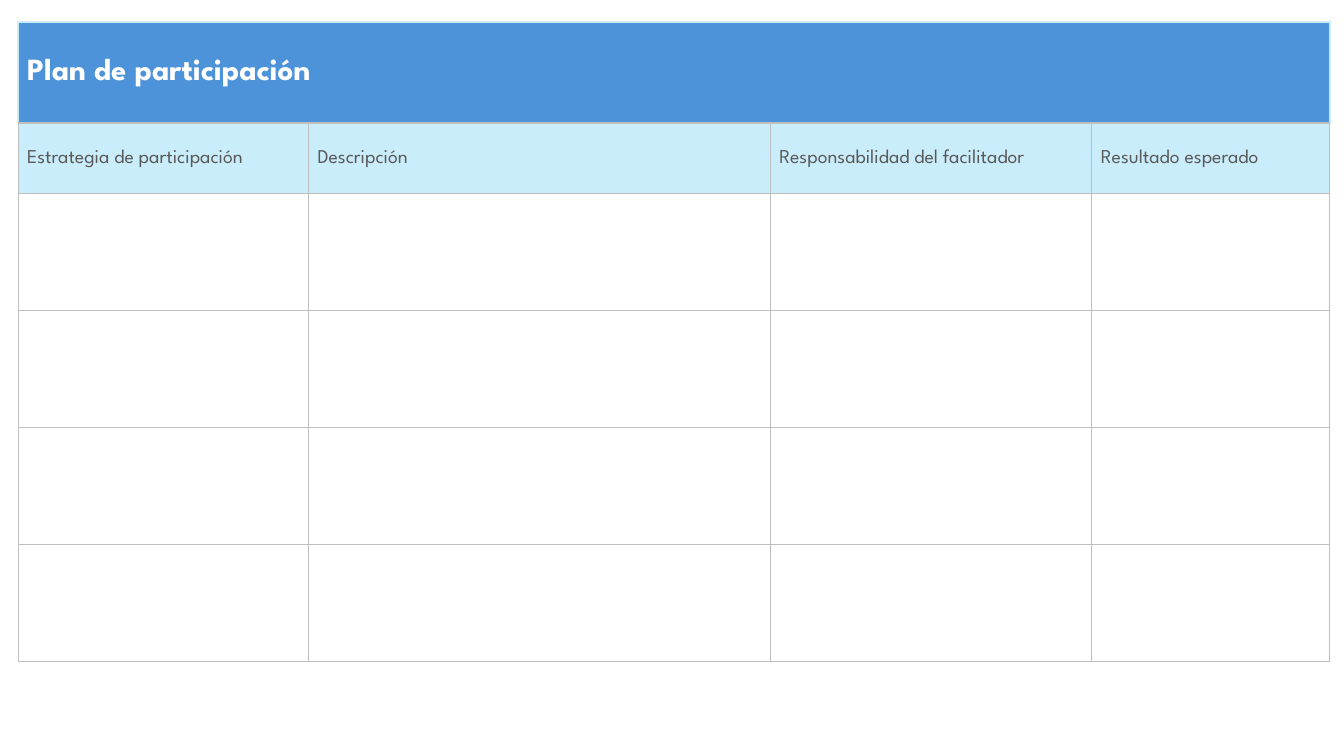
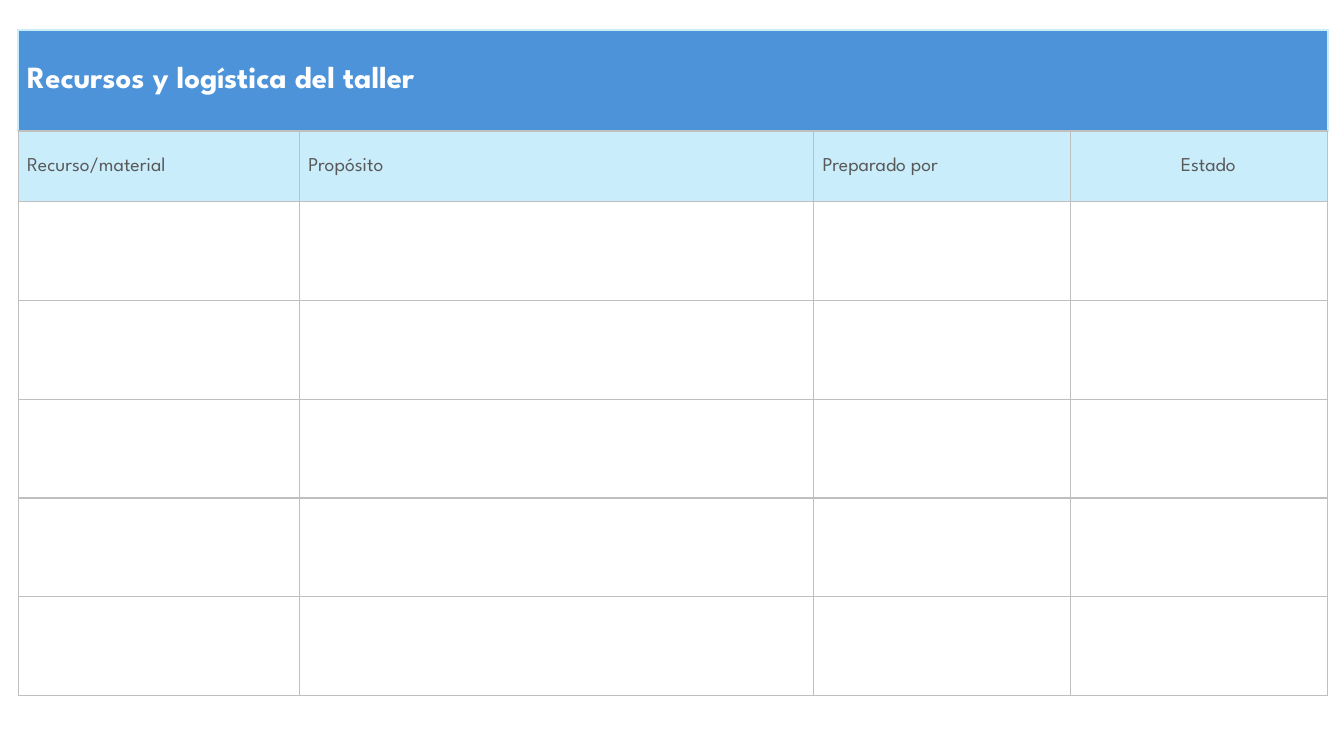
from pptx import Presentation
from pptx.dml.color import RGBColor
from pptx.enum.text import MSO_ANCHOR, PP_ALIGN
from pptx.oxml.xmlchemy import OxmlElement
from pptx.util import Inches, Pt

# Shared style
FONT = "League Spartan"
BLUE = RGBColor(0x4D, 0x93, 0xD9)
PALE_BLUE = RGBColor(0xCA, 0xED, 0xFB)
GREY = RGBColor(0xBF, 0xBF, 0xBF)
TEXT_GREY = RGBColor(0x59, 0x59, 0x59)
WHITE = RGBColor(0xFF, 0xFF, 0xFF)

TABLE_LEFT = 0.18
TITLE_HEIGHT = 1
HEADER_HEIGHT = 0.7
TEXT_INDENT = 0.09

GRID_BORDER = (GREY, 1)
TITLE_BORDER = (PALE_BLUE, 1.5)
GRID_EDGES = {edge: GRID_BORDER for edge in "LRTB"}
TITLE_EDGES = {**{edge: TITLE_BORDER for edge in "LRT"}, "B": GRID_BORDER}


def set_borders(cell, edges):
    """Draw the edges of a cell; call before setting its fill."""
    properties = cell._tc.get_or_add_tcPr()
    for edge, (color, width) in edges.items():
        line = OxmlElement(f"a:ln{edge}")
        line.set("w", str(Pt(width)))
        fill = OxmlElement("a:solidFill")
        value = OxmlElement("a:srgbClr")
        value.set("val", str(color))
        fill.append(value)
        line.append(fill)
        properties.append(line)


def style_cell(cell, edges, fill=None):
    set_borders(cell, edges)
    if fill is None:
        cell.fill.background()
    else:
        cell.fill.solid()
        cell.fill.fore_color.rgb = fill


def write_cell(cell, text, size, color, bold=False, align=PP_ALIGN.LEFT, indent=TEXT_INDENT):
    cell.vertical_anchor = MSO_ANCHOR.MIDDLE
    cell.margin_left = Inches(indent)
    cell.margin_top = cell.margin_right = Inches(0.01)
    cell.margin_bottom = 0
    cell.text_frame.text = text
    paragraph = cell.text_frame.paragraphs[0]
    paragraph.alignment = align
    font = paragraph.runs[0].font
    font.name, font.size, font.bold = FONT, Pt(size), bold
    font.color.rgb = color


def add_plan_table(slide, top, title, headers, widths, body_rows, body_height):
    """Add a table with a title band, a header row and empty rows to fill in."""
    heights = [TITLE_HEIGHT, HEADER_HEIGHT] + [body_height] * body_rows
    frame = slide.shapes.add_table(
        len(heights), len(widths), Inches(TABLE_LEFT), Inches(top),
        Inches(sum(widths)), Inches(sum(heights)))
    table = frame.table
    table.first_row = table.horz_banding = False
    for column, width in zip(table.columns, widths):
        column.width = Inches(width)
    for row, height in zip(table.rows, heights):
        row.height = Inches(height)

    # Fills and borders
    row_styles = [(TITLE_EDGES, BLUE), (GRID_EDGES, PALE_BLUE)]
    row_styles += [(GRID_EDGES, None)] * body_rows
    for row, (edges, fill) in zip(table.rows, row_styles):
        for cell in row.cells:
            style_cell(cell, edges, fill)

    # Title band and column headers
    title_cell = table.cell(0, 0)
    title_cell.merge(table.cell(0, len(widths) - 1))
    write_cell(title_cell, title, 22, WHITE, bold=True)
    for cell, header in zip(table.rows[1].cells, headers):
        write_cell(cell, header, 14, TEXT_GREY)
    return table


def main():
    presentation = Presentation()
    presentation.slide_width = Inches(13.33)
    presentation.slide_height = Inches(7.5)
    blank_layout = presentation.slide_layouts[6]

    # Participation plan
    slide = presentation.slides.add_slide(blank_layout)
    add_plan_table(
        slide, 0.22, "Plan de participación",
        ["Estrategia de participación", "Descripción",
         "Responsabilidad del facilitador", "Resultado esperado"],
        [2.88, 4.58, 3.19, 2.36], body_rows=4, body_height=1.16)

    # Workshop resources
    slide = presentation.slides.add_slide(blank_layout)
    headers = ["Recurso/material", "Propósito", "Preparado por", "Estado"]
    table = add_plan_table(
        slide, 0.3, "Recursos y logística del taller", headers,
        [2.79, 5.1, 2.55, 2.55], body_rows=5, body_height=0.98)
    write_cell(table.cell(1, 3), headers[3], 14, TEXT_GREY,
               align=PP_ALIGN.CENTER, indent=0.19)

    presentation.save("out.pptx")


if __name__ == "__main__":
    main()
